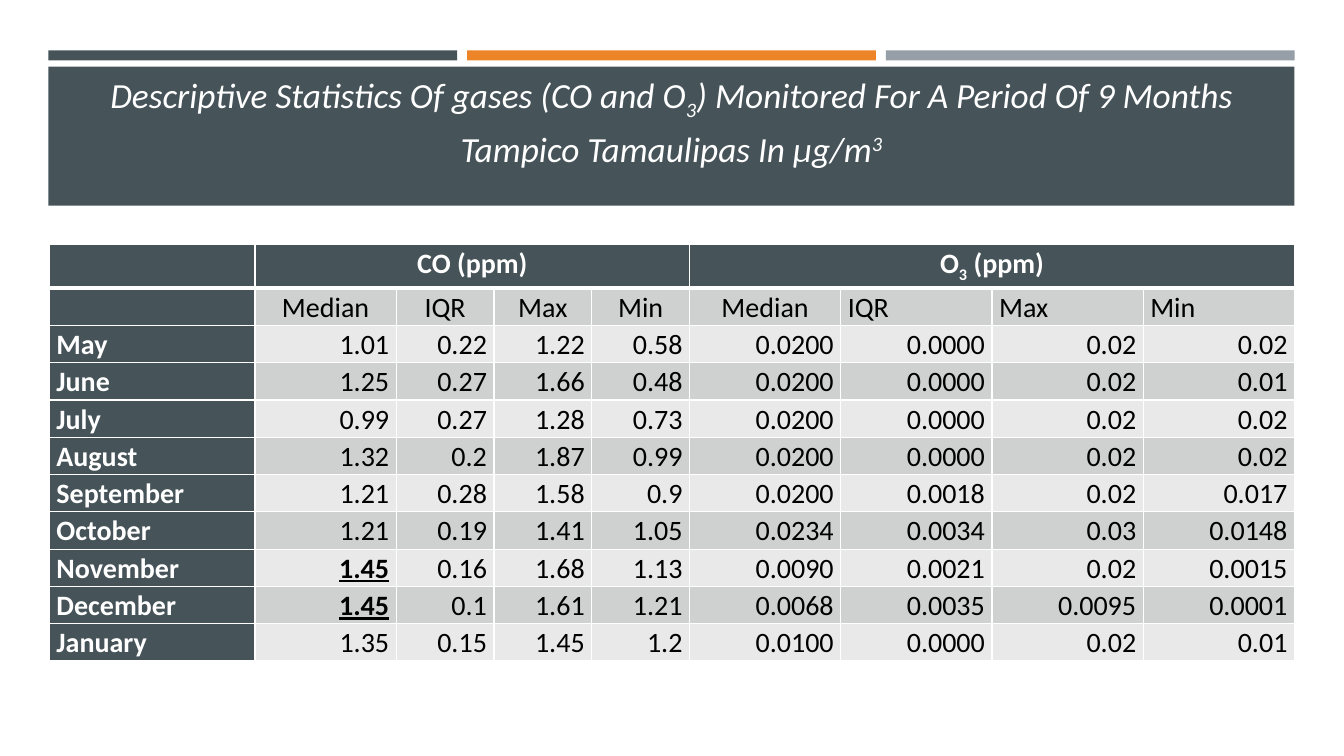
from lxml import etree
from pptx import Presentation
from pptx import util as u
from pptx.dml import color
from pptx.enum import shapes, text
from pptx.oxml import ns

COLORS = {"slate": "465359", "orange": "ED8428", "gray": "969FA7", "white": "FFFFFF",
          "black": "000000", "dark_band": "CFD1D1", "light_band": "E9E9EA"}
LEFT, CENTER, RIGHT = text.PP_ALIGN.LEFT, text.PP_ALIGN.CENTER, text.PP_ALIGN.RIGHT

TITLE = [("Descriptive Statistics Of gases (CO and O", 0), ("3", -25),
         (") Monitored For A Period Of 9 Months Tampico Tamaulipas In µg/m", 0), ("3", 30)]
GASES = {1: [("CO (ppm)", 0)], 5: [("O", 0), ("3", -25), (" (ppm)", 0)]}
STATISTICS = ["Median", "IQR", "Max", "Min"] * 2
MONTHS = [
    ("May", "1.01 0.22 1.22 0.58 0.0200 0.0000 0.02 0.02"),
    ("June", "1.25 0.27 1.66 0.48 0.0200 0.0000 0.02 0.01"),
    ("July", "0.99 0.27 1.28 0.73 0.0200 0.0000 0.02 0.02"),
    ("August", "1.32 0.2 1.87 0.99 0.0200 0.0000 0.02 0.02"),
    ("September", "1.21 0.28 1.58 0.9 0.0200 0.0018 0.02 0.017"),
    ("October", "1.21 0.19 1.41 1.05 0.0234 0.0034 0.03 0.0148"),
    ("November", "1.45 0.16 1.68 1.13 0.0090 0.0021 0.02 0.0015"),
    ("December", "1.45 0.1 1.61 1.21 0.0068 0.0035 0.0095 0.0001"),
    ("January", "1.35 0.15 1.45 1.2 0.0100 0.0000 0.02 0.01"),
]
HIGHEST_CO = "1.45"
COLUMN_WIDTHS = [2.04, 1.4] + [0.97] * 3 + [1.5] * 4


def rgb(name):
    """Return the named colour."""
    return color.RGBColor.from_string(COLORS[name])


def write(frame, pieces, size=20, ink="black", align=LEFT, bold=False, italic=False,
          underline=False, spacing=1.07, after=8):
    """Fill a text frame with one paragraph of (wording, baseline) pieces."""
    paragraph = frame.paragraphs[0]
    paragraph.alignment = align
    paragraph.line_spacing = spacing
    paragraph.space_before, paragraph.space_after = u.Pt(0), u.Pt(after)
    for wording, baseline in pieces:
        run = paragraph.add_run()
        run.text = wording
        font = run.font
        font.name, font.size, font.color.rgb = "Calibri", u.Pt(size), rgb(ink)
        font.bold, font.italic, font.underline = bold, italic, underline
        if baseline:
            run._r.get_or_add_rPr().set("baseline", str(baseline * 1000))


def add_bar(slide, fill, left, top, width, height):
    """Add a plain filled rectangle."""
    bar = slide.shapes.add_shape(shapes.MSO_SHAPE.RECTANGLE, u.Inches(left), u.Inches(top),
                                 u.Inches(width), u.Inches(height))
    bar.shadow.inherit = False
    bar.fill.solid()
    bar.fill.fore_color.rgb = rgb(fill)
    bar.line.fill.background()


def build_banner(slide, left, top, width):
    """Place the three accent strips, the title band and the title."""
    gap = 0.1
    strip_width = (width - 2 * gap) / 3
    for index, fill in enumerate(("slate", "orange", "gray")):
        add_bar(slide, fill, left + index * (strip_width + gap), top, strip_width, 0.1)
    add_bar(slide, "slate", left, top + 0.16, width, 1.38)

    title = slide.shapes.title
    slide.shapes._spTree.append(title._element)
    title.left, title.top = u.Inches(left + 0.15), u.Inches(top + 0.3)
    title.width, title.height = u.Inches(width - 0.3), u.Inches(1.33)
    frame = title.text_frame
    frame.word_wrap = True
    frame.auto_size = text.MSO_AUTO_SIZE.NONE
    frame.vertical_anchor = text.MSO_ANCHOR.BOTTOM
    frame.margin_bottom = u.Inches(0.45)
    write(frame, TITLE, size=25.2, ink="white", align=CENTER, italic=True,
          spacing=u.Pt(34), after=0)


def set_borders(cell, top, bottom):
    """Give a cell white borders, with its top and bottom widths in points."""
    properties = cell._tc.get_or_add_tcPr()
    for position, (side, points) in enumerate((("L", 1), ("R", 1), ("T", top), ("B", bottom))):
        edge = etree.Element(ns.qn(f"a:ln{side}"), w=str(u.Pt(points)))
        paint = etree.SubElement(edge, ns.qn("a:solidFill"))
        etree.SubElement(paint, ns.qn("a:srgbClr"), val=COLORS["white"])
        properties.insert(position, edge)


def cell_content(row, column):
    """Return the pieces and text format of a table cell."""
    if row == 0:
        return GASES.get(column), dict(ink="white", bold=True, align=CENTER)
    if row == 1:
        if column == 0:
            return None, {}
        return [(STATISTICS[column - 1], 0)], dict(align=CENTER if column < 6 else LEFT)
    month, values = MONTHS[row - 2]
    if column == 0:
        return [(month, 0)], dict(ink="white", bold=True)
    value = values.split()[column - 1]
    highest = column == 1 and value == HIGHEST_CO
    return [(value, 0)], dict(align=RIGHT, bold=highest, underline=highest)


def build_statistics(slide, left, top, width):
    """Place the table of monthly gas statistics."""
    row_count, column_count = len(MONTHS) + 2, len(COLUMN_WIDTHS)
    heights = [0.44] + [0.37] * (row_count - 1)
    table = slide.shapes.add_table(row_count, column_count, u.Inches(left), u.Inches(top),
                                   u.Inches(width), u.Inches(sum(heights))).table
    for column, share in zip(table.columns, COLUMN_WIDTHS):
        column.width = u.Inches(width * share / sum(COLUMN_WIDTHS))
    for row, height in zip(table.rows, heights):
        row.height = u.Inches(height)
    for row in range(row_count):
        for column in range(column_count):
            cell = table.cell(row, column)
            cell.margin_left = cell.margin_right = u.Inches(0.07)
            cell.margin_top = cell.margin_bottom = 0
            band = "dark_band" if row % 2 else "light_band"
            cell.fill.solid()
            cell.fill.fore_color.rgb = rgb("slate" if row == 0 or column == 0 else band)
            set_borders(cell, top=3 if row == 1 else 1, bottom=3 if row == 0 else 1)
            pieces, style = cell_content(row, column)
            if pieces:
                write(cell.text_frame, pieces, **style)
    for first in GASES:
        table.cell(0, first).merge(table.cell(0, first + 3))


def main():
    """Build and save the slide."""
    deck = Presentation()
    deck.slide_width, deck.slide_height = u.Inches(13.33), u.Inches(7.5)
    slide = deck.slides.add_slide(deck.slide_layouts[5])
    build_banner(slide, 0.48, 0.5, 12.36)
    build_statistics(slide, 0.49, 2.42, 12.35)
    deck.save("out.pptx")


if __name__ == "__main__":
    main()
